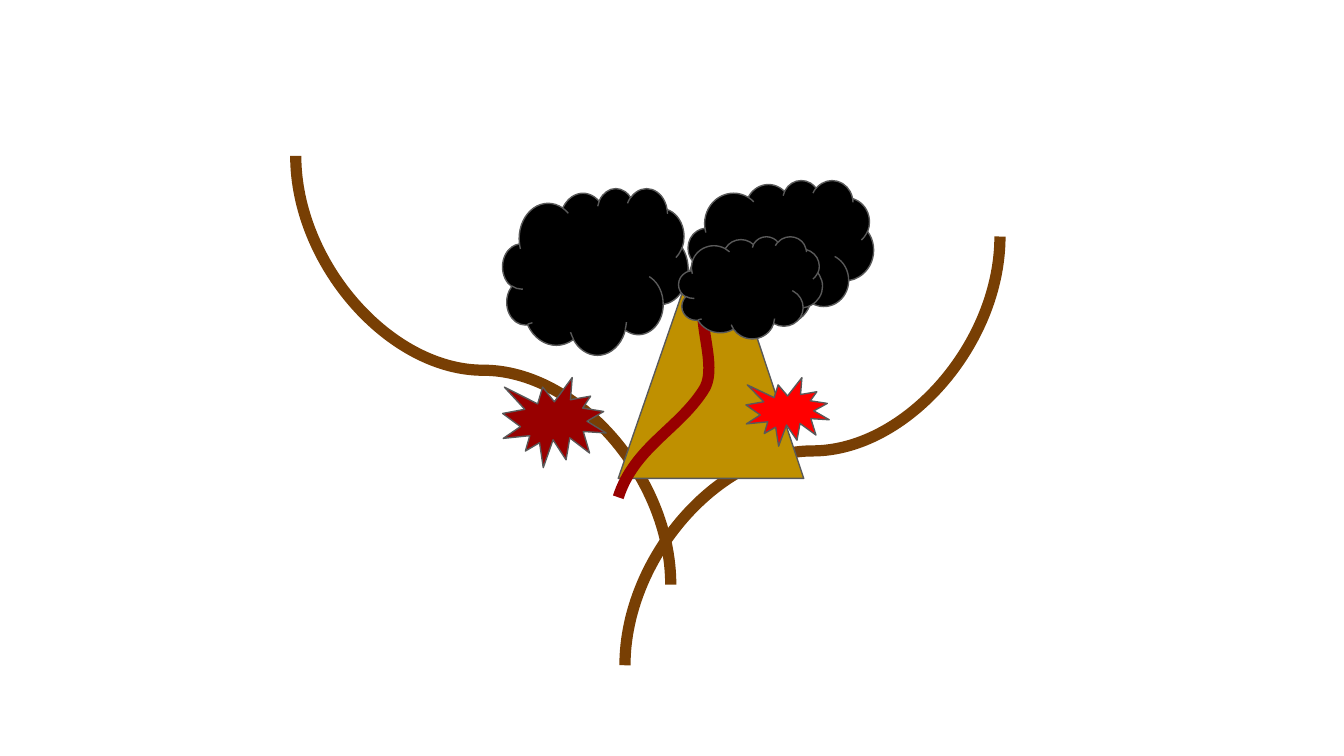
from lxml import etree
from pptx import Presentation
from pptx import util as u
from pptx.dml.color import RGBColor
from pptx.enum import shapes
from pptx.oxml.ns import qn

COLORS = {
    "branch": "783F04",
    "cone": "BF9000",
    "smoke": "000000",
    "outline": "595959",
    "fire": "FF0000",
    "lava": "980000",
}
CELL = u.Inches(0.1)  # grid of 100 columns by 56.25 rows
THICK, THIN = 6, 0.75


def cells(*counts):
    return [round(count * CELL) for count in counts]


class Scene:
    def __init__(self, slide):
        self.slide = slide

    def stroke(self, line, color, width):
        line.color.rgb = RGBColor.from_string(COLORS[color])
        line.width = u.Pt(width)

    def preset(self, kind, color, column, row, columns, rows):
        shape = self.slide.shapes.add_shape(kind, *cells(column, row, columns, rows))
        shape.shadow.inherit = False
        shape.fill.solid()
        shape.fill.fore_color.rgb = RGBColor.from_string(COLORS[color])
        self.stroke(shape.line, "outline", THIN)
        return shape

    def upright_curve(self, color, start, end):
        """Curved connector turned 270 degrees, so both ends leave vertically."""
        (x1, y1), (x2, y2) = start, end
        middle_x, middle_y = (x1 + x2) / 2, (y1 + y2) / 2
        half_x, half_y = (x2 - x1) / 2, (y2 - y1) / 2
        connector = self.slide.shapes.add_connector(
            shapes.MSO_CONNECTOR.CURVE,
            *cells(middle_x + half_y, middle_y - half_x,
                   middle_x - half_y, middle_y + half_x))
        properties = connector._element.spPr
        properties.find(qn("a:xfrm")).set("rot", str(270 * 60000))
        self.stroke(connector.line, color, THICK)
        etree.SubElement(properties, qn("a:effectLst"))

    def bezier(self, color, start, points):
        """Open curve; every three points are two controls and an end."""
        builder = self.slide.shapes.build_freeform(*cells(*start))
        builder.add_line_segments([cells(*point) for point in points], close=False)
        shape = builder.convert_to_shape()
        segments = list(shape._element.iter(qn("a:lnTo")))
        for first in range(0, len(segments), 3):
            curve = etree.Element(qn("a:cubicBezTo"))
            segments[first].addprevious(curve)
            for segment in segments[first:first + 3]:
                curve.append(segment[0])
                segment.getparent().remove(segment)
        shape.shadow.inherit = False
        shape.fill.background()
        self.stroke(shape.line, color, THICK)


def main():
    presentation = Presentation()
    presentation.slide_width, presentation.slide_height = cells(100, 56.25)
    scene = Scene(presentation.slides.add_slide(presentation.slide_layouts[6]))
    kinds = shapes.MSO_SHAPE

    scene.upright_curve("branch", (22, 11.6), (49.9, 43.5))
    scene.upright_curve("branch", (46.5, 49.5), (74.4, 17.6))

    cone = scene.preset(kinds.ISOSCELES_TRIANGLE, "cone", 46, 15.2, 13.8, 20.4)
    cone.adjustments[0] = 0.51
    scene.preset(kinds.CLOUD, "smoke", 51.2, 13.4, 13.8, 10.7)
    scene.preset(kinds.CLOUD, "smoke", 37.4, 14, 13.8, 12.4)
    scene.preset(kinds.EXPLOSION1, "fire", 55.5, 28.1, 6.2, 5.1)
    scene.preset(kinds.EXPLOSION1, "lava", 37.4, 28.1, 7.7, 6.7)

    scene.bezier("lava", (55.5, 19.9), [
        (54.4, 20.5), (52.5, 20.8), (52.3, 22.6),
        (52.1, 24.7), (53.4, 27.6), (52.3, 29.1),
        (50.4, 32), (47.2, 33.3), (46, 37),
    ])
    scene.preset(kinds.CLOUD, "smoke", 50.5, 17.6, 10.7, 7.6)

    presentation.save("out.pptx")


if __name__ == "__main__":
    main()
